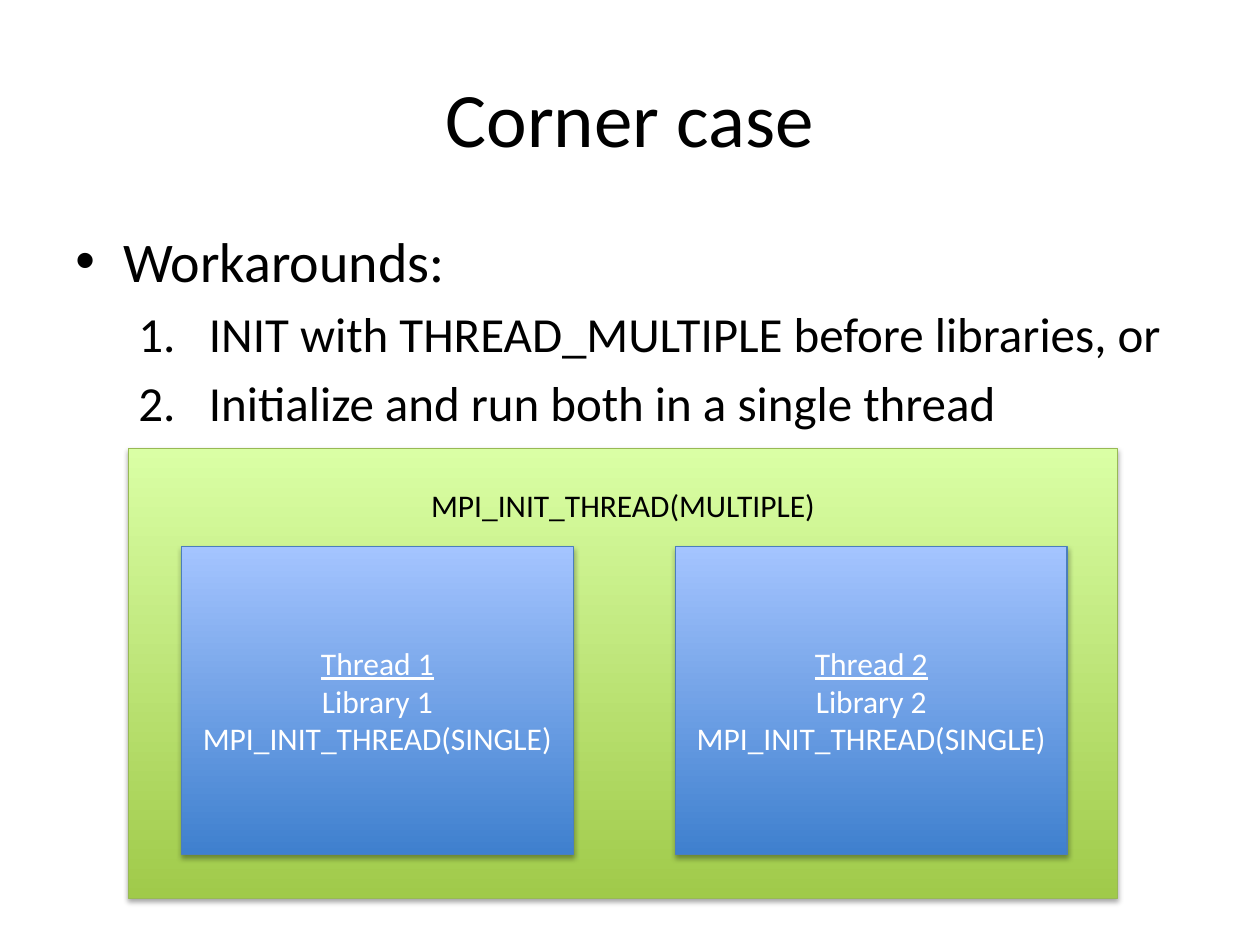
"""Build the slide on workarounds for the threading corner case."""
from lxml import etree
from pptx import Presentation
from pptx.dml.color import RGBColor
from pptx.enum.shapes import MSO_SHAPE
from pptx.enum.text import MSO_ANCHOR, PP_ALIGN
from pptx.oxml.ns import qn
from pptx.util import Inches, Pt

RECT = MSO_SHAPE.RECTANGLE
TOP, MIDDLE = MSO_ANCHOR.TOP, MSO_ANCHOR.MIDDLE
LEFT, CENTER = PP_ALIGN.LEFT, PP_ALIGN.CENTER
BLACK = RGBColor(0, 0, 0)
WHITE = RGBColor(255, 255, 255)
GREEN = (RGBColor(0xA0, 0xCA, 0x4A), RGBColor(0xDA, 0xFF, 0xA5), RGBColor(0x98, 0xB9, 0x55))
BLUE = (RGBColor(0x3F, 0x80, 0xCE), RGBColor(0xA4, 0xC4, 0xFF), RGBColor(0x4B, 0x7E, 0xBC))
FONT = "Calibri"

TITLE = "Corner case"
CHAR = ("buChar", {"char": "•"})
NUMBER = ("buAutoNum", {"type": "arabicPeriod"})
POINTS = [
    ("Workarounds:", 0, 32, 0.38, 0.38, CHAR),
    ("INIT with THREAD_MULTIPLE before libraries, or", 1, 28, 1.06, 0.56, NUMBER),
    ("Initialize and run both in a single thread", 1, 28, 1.06, 0.56, NUMBER),
]
OUTER = "MPI_INIT_THREAD(MULTIPLE)"
INNER = "MPI_INIT_THREAD(SINGLE)"
THREADS = [(f"Thread {n}", f"Library {n}", INNER) for n in (1, 2)]
BOX_LEFT, BOX_STEP = 1.44, 3.92


def write(para, text, size, color, align=CENTER):
    para.alignment = align
    run = para.add_run()
    run.text = text
    run.font.name = FONT
    run.font.size = Pt(size)
    run.font.color.rgb = color
    return run


def add_mark(para, indent, hang, mark):
    props = para._p.get_or_add_pPr()
    props.set("marL", str(Inches(indent)))
    props.set("indent", str(-Inches(hang)))
    tag, attrs = mark
    etree.SubElement(props, qn("a:buFont"), typeface="Arial" if mark is CHAR else "+mj-lt")
    etree.SubElement(props, qn(f"a:{tag}"), attrs)


def add_shadow(shape):
    shape.shadow.inherit = False
    effects = shape._element.spPr.find(qn("a:effectLst"))
    outer = etree.SubElement(effects, qn("a:outerShdw"), blurRad=str(Pt(3.1)),
                             dist=str(Pt(1.8)), dir="5400000", rotWithShape="0")
    color = etree.SubElement(outer, qn("a:srgbClr"), val="000000")
    etree.SubElement(color, qn("a:alpha"), val="35000")


def add_box(slide, place, colors, lines, ink, anchor):
    box = slide.shapes.add_shape(RECT, *map(Inches, place))
    box.fill.gradient()
    box.fill.gradient_angle = 90
    for stop, color, spot in zip(box.fill.gradient_stops, colors, (0, 1)):
        stop.color.rgb = color
        stop.position = spot
    box.line.color.rgb = colors[2]
    box.line.width = Pt(0.75)
    add_shadow(box)
    frame = box.text_frame
    frame.word_wrap = True
    frame.vertical_anchor = anchor
    for i, line in enumerate(lines):
        para = frame.add_paragraph() if i else frame.paragraphs[0]
        run = write(para, line, 18, ink)
        if len(lines) > 1 and i == 0:
            run.font.underline = True
    return box


def main():
    deck = Presentation()
    deck.slide_width, deck.slide_height = Inches(10), Inches(7.5)
    slide = deck.slides.add_slide(deck.slide_layouts[5])

    title = slide.shapes.title
    title.left, title.top, title.width, title.height = map(Inches, (0.5, 0.3, 9, 1.25))
    title.text_frame.vertical_anchor = MIDDLE
    write(title.text_frame.paragraphs[0], TITLE, 44, BLACK)

    body = slide.shapes.add_textbox(*map(Inches, (0.5, 1.75, 9, 4.95))).text_frame
    body.word_wrap = True
    for i, (text, level, size, indent, hang, mark) in enumerate(POINTS):
        para = body.add_paragraph() if i else body.paragraphs[0]
        para.level = level
        para.space_before = Pt(size * 0.2)
        add_mark(para, indent, hang, mark)
        write(para, text, size, BLACK, LEFT)

    outer = add_box(slide, (1.02, 3.56, 7.85, 3.57), GREEN, [OUTER], BLACK, TOP)
    outer.text_frame.margin_top = Inches(0.3)
    for i, lines in enumerate(THREADS):
        place = (BOX_LEFT + i * BOX_STEP, 4.34, 3.11, 2.44)
        add_box(slide, place, BLUE, lines, WHITE, MIDDLE)

    deck.save("out.pptx")


if __name__ == "__main__":
    main()
